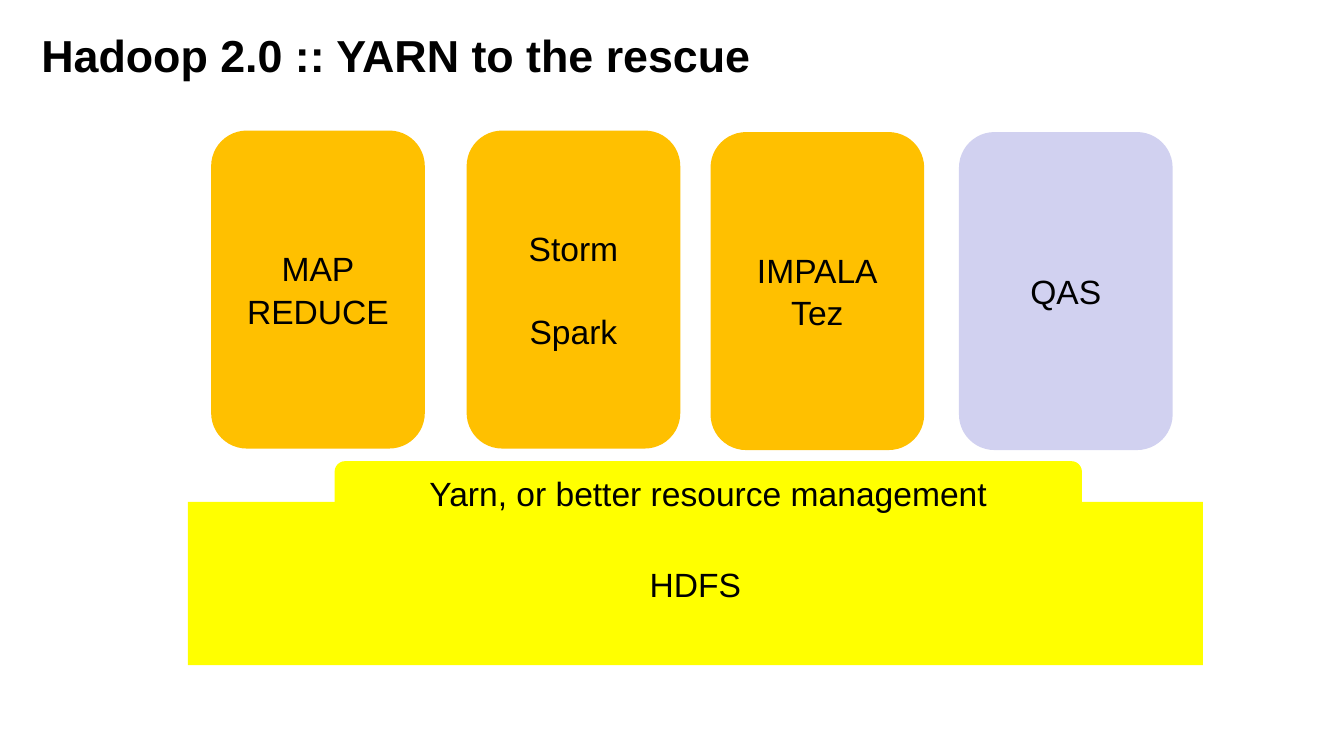
import pptx
import pptx.util
import pptx.dml.color
import pptx.enum.shapes
import pptx.enum.text

Inches = pptx.util.Inches
Pt = pptx.util.Pt
RGB = pptx.dml.color.RGBColor
Shape = pptx.enum.shapes.MSO_SHAPE
Align = pptx.enum.text.PP_ALIGN

AMBER = RGB(0xFF, 0xC0, 0x00)
YELLOW = RGB(0xFF, 0xFF, 0x00)
LILAC = RGB(0xD1, 0xD1, 0xF0)
BLACK = RGB(0x00, 0x00, 0x00)

# left, top, text, fill, space between lines in points
ENGINES = [
    (4.19, 2.59, "MAP\nREDUCE", AMBER, 2.5),
    (9.26, 2.59, "Storm\nSpark", AMBER, 60),
    (14.1, 2.62, "IMPALA\nTez", AMBER, 2.5),
    (19.03, 2.62, "QAS", LILAC, 0),
]
ENGINE_SIZE = (4.24, 6.31)


def write(shape, text, size, align, pad, gap=0, bold=False):
    frame = shape.text_frame
    frame.word_wrap = True
    frame.vertical_anchor = pptx.enum.text.MSO_ANCHOR.MIDDLE
    frame.margin_left = frame.margin_right = Inches(pad[0])
    frame.margin_top = frame.margin_bottom = Inches(pad[1])
    frame.text = text
    for index, line in enumerate(frame.paragraphs):
        line.alignment = align
        if index and gap:
            line.space_before = Pt(gap)
        for run in line.runs:
            run.font.name = "Arial"
            run.font.size = Pt(size)
            run.font.bold = bold
            run.font.color.rgb = BLACK


def add_block(slide, kind, box, text, fill, gap=0):
    block = slide.shapes.add_shape(kind, *map(Inches, box))
    block.shadow.inherit = False
    block.fill.solid()
    block.fill.fore_color.rgb = fill
    block.line.fill.background()
    write(block, text, 48, Align.CENTER, (0.27, 0.13), gap)


def add_title(slide, text):
    title = slide.shapes.add_textbox(*map(Inches, (0.76, 0.18, 25.14, 1.81)))
    write(title, text, 64, Align.LEFT, (0.06, 0.06), bold=True)


def main():
    deck = pptx.Presentation()
    deck.slide_width = Inches(26.67)
    deck.slide_height = Inches(15)
    slide = deck.slides.add_slide(deck.slide_layouts[6])

    add_block(slide, Shape.RECTANGLE, (3.73, 9.96, 20.14, 3.24), "HDFS", YELLOW)
    for left, top, text, fill, gap in ENGINES:
        add_block(slide, Shape.ROUNDED_RECTANGLE, (left, top, *ENGINE_SIZE),
                  text, fill, gap)
    add_block(slide, Shape.ROUNDED_RECTANGLE, (6.64, 9.15, 14.83, 1.25),
              "Yarn, or better resource management", YELLOW)
    add_title(slide, "Hadoop 2.0 :: YARN to the rescue")

    deck.save("out.pptx")


if __name__ == "__main__":
    main()
